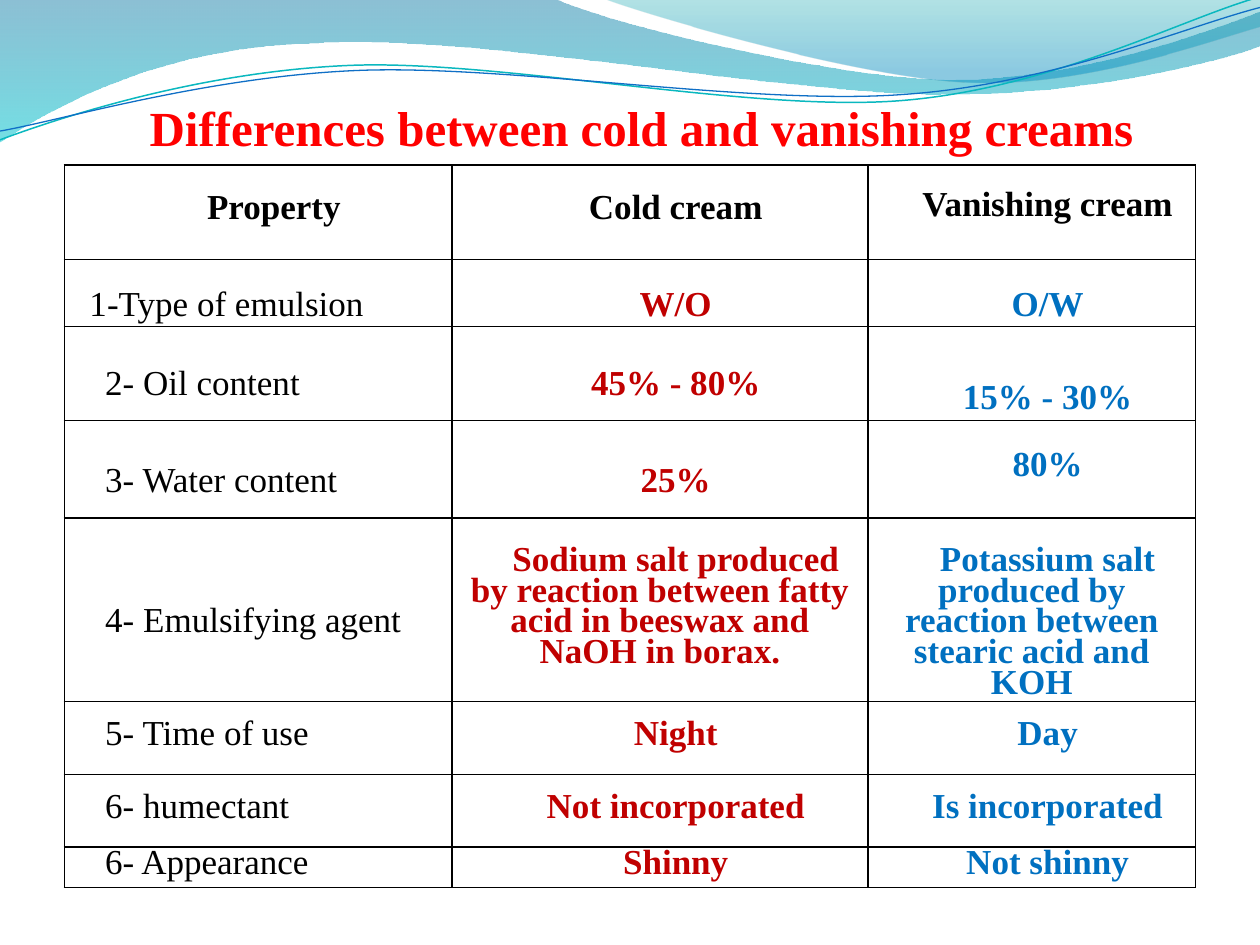
from dataclasses import dataclass
from math import cos, radians, sin

from lxml import etree
from pptx import Presentation
from pptx.dml.color import RGBColor
from pptx.enum.text import MSO_ANCHOR, MSO_AUTO_SIZE, PP_ALIGN
from pptx.oxml.ns import qn
from pptx.util import Pt

TOP, MIDDLE = MSO_ANCHOR.TOP, MSO_ANCHOR.MIDDLE
LEFT, CENTER = PP_ALIGN.LEFT, PP_ALIGN.CENTER
FIT_SHAPE = MSO_AUTO_SIZE.SHAPE_TO_FIT_TEXT
UNITS_PER_POINT = 100
RIPPLE_TILT = -2.7


@dataclass(frozen=True)
class Theme:
    """Colours, type sizes and spacing of the slide."""
    font: str = "Times New Roman"
    title_size: float = 28
    body_size: float = 20
    title: str = "FF0000"
    ink: str = "000000"
    cold: str = "C00000"
    vanishing: str = "0070C0"
    wide_indent: float = 18
    narrow_indent: float = 9
    tight_line: float = 16.8
    body_line: float = 17.5
    cell_inset: float = 5.4
    border: float = 1


THEME = Theme()

BANDS = [
    ([(0, 0), (317, -0.7),
      (342.7, 12.2, 478, 45.4, 545.8, 45.4), (614.2, 45.4, 689.8, 18.7, 720, 6.5),
      (720.7, 25.9), (707.8, 31.7, 626.4, 54.7, 537.1, 54),
      (447.8, 54, 275, 20.2, 185, 24.5), (92.9, 25.9, 33.1, 59.8, -0.7, 81.4), (0, 0)],
     [(0, "0074A1", 45), (1, "00C6CF", 55)]),
    ([(344.9, -0.7), (366.5, 7.9, 491, 44.6, 553.7, 46.8),
      (619.2, 49.7, 691.9, 23, 720, 15.1), (720, 0), (344.9, -0.7)],
     [(0, "00A1A9", 30), (0.8, "008BBF", 45)]),
]
RIPPLES = [
    ([(0, 79.9), (34.6, 67, 113.8, 41, 199.4, 37.4),
      (284.4, 33.8, 427, 64.1, 513.4, 57.6), (599.8, 51.1, 675.4, 10.8, 718.6, -1.4)],
     (359.3, 41.4), "0AB8BF", 0.85),
    ([(0, 74.9), (33.8, 69.1, 118.1, 43.9, 203.8, 40.3),
      (290.2, 36.7, 429.8, 60.5, 516.2, 54), (601.9, 48.2, 677.5, 15.1, 720, 4.3)],
     (359.7, 42.5), "0F6FC6", 0.75),
]

COLUMN_WIDTHS = [221.5, 237.8, 187.2]
HEADER = ["Property", "Cold cream", "Vanishing cream"]
PROPERTIES = [
    ["1-Type of emulsion", "W/O", "O/W"],
    ["2- Oil content", "45% - 80%", "15% - 30%"],
    ["3- Water content", "25%", "80%"],
    ["4- Emulsifying agent",
     "Sodium salt produced by reaction between fatty acid in beeswax and NaOH in borax.",
     "Potassium salt produced by reaction between stearic acid and KOH"],
    ["5- Time of use", "Night", "Day"],
    ["6- humectant", "Not incorporated", "Is incorporated"],
    ["6- Appearance", "Shinny", "Not shinny"],
]
ROW_HEIGHTS = [54, 38.2, 53.7, 55.8, 94, 41.5, 41.5, 23.2]
LINES_ABOVE = [(1, 1, 1), (1, 1, 1), (1, 1, 2), (1, 1, 1), (1, 0, 1)] + [(0, 0, 0)] * 3
LINES_BELOW = {(0, 0): 1, (0, 1): 1, (3, 2): 1}
TIGHT_ROWS = (0, 2)


def apply(target, formats):
    """Set every attribute in formats on target."""
    for name, value in formats.items():
        setattr(target, name, value)


def write(paragraph, text, size, colour, bold, align, indent):
    """Fill a paragraph with one formatted, first-line indented text."""
    properties = paragraph._p.get_or_add_pPr()
    properties.set("marL", "0")
    properties.set("indent", str(int(Pt(indent))))
    paragraph.alignment = align
    run = paragraph.add_run()
    run.text = text
    apply(run.font, {"name": THEME.font, "size": Pt(size), "bold": bold})
    run.font.color.rgb = RGBColor.from_string(colour)


def level(segments, centre, tilt):
    """Turn segments about a centre so that the tilt restores them."""
    (cx, cy), angle = centre, radians(-tilt)
    return [[value for x, y in zip(segment[::2], segment[1::2])
             for value in (cx + (x - cx) * cos(angle) - (y - cy) * sin(angle),
                           cy + (x - cx) * sin(angle) + (y - cy) * cos(angle))]
            for segment in segments]


def add_outline(slide, left, top, segments, close):
    """Draw one shadowless outline of lines and cubic curves."""
    points = [(x * UNITS_PER_POINT, y * UNITS_PER_POINT) for segment in segments
              for x, y in zip(segment[::2], segment[1::2])]
    builder = slide.shapes.build_freeform(*points[0], scale=Pt(1) / UNITS_PER_POINT)
    builder.add_line_segments(points[1:], close=close)
    outline = builder.convert_to_shape(Pt(left), Pt(top))
    outline.shadow.inherit = False
    steps = iter(outline._element.findall(".//" + qn("a:lnTo")))
    for segment in segments[1:]:
        first = next(steps)
        if len(segment) == 6:
            first.tag = qn("a:cubicBezTo")
            for step in (next(steps), next(steps)):
                first.append(step[0])
                step.getparent().remove(step)
    return outline


def add_waves(slide, left, top):
    """Draw the translucent bands and thin ripples of the page header."""
    for segments, stops in BANDS:
        band = add_outline(slide, left, top, segments, True)
        band.line.fill.background()
        band.fill.gradient()
        band.fill.gradient_angle = 270
        for stop, (position, colour, _) in zip(band.fill.gradient_stops, stops):
            stop.position = position
            stop.color.rgb = RGBColor.from_string(colour)
        tints = band._element.spPr.findall(".//" + qn("a:gs") + "/" + qn("a:srgbClr"))
        for tint, (_, _, opacity) in zip(tints, stops):
            etree.SubElement(tint, qn("a:alpha"), val=str(opacity * 1000))
    for segments, centre, colour, width in RIPPLES:
        ripple = add_outline(slide, left, top, level(segments, centre, RIPPLE_TILT), False)
        ripple.rotation = RIPPLE_TILT
        ripple.fill.background()
        ripple.line.color.rgb = RGBColor.from_string(colour)
        ripple.line.width = Pt(width)


def add_title(slide, left, top, width, height):
    """Place the centred heading above the table."""
    heading = slide.shapes.add_textbox(Pt(left), Pt(top), Pt(width), Pt(height)).text_frame
    apply(heading, {"word_wrap": True, "auto_size": FIT_SHAPE})
    write(heading.paragraphs[0], "Differences between cold and vanishing creams",
          THEME.title_size, THEME.title, True, CENTER, THEME.wide_indent)
    heading.paragraphs[0]._p.get_or_add_pPr().set("rtl", "1")


def add_borders(cell):
    """Rule all four sides of a cell."""
    properties = cell._tc.get_or_add_tcPr()
    for side in ("a:lnL", "a:lnR", "a:lnT", "a:lnB"):
        rule = etree.SubElement(properties, qn(side), w=str(int(Pt(THEME.border))))
        paint = etree.SubElement(rule, qn("a:solidFill"))
        etree.SubElement(paint, qn("a:srgbClr"), val=THEME.ink)


def fill_cell(cell, row, column, text):
    """Format one table cell by its row and column."""
    line = THEME.tight_line if row in TIGHT_ROWS else THEME.body_line
    is_label = row > 0 and column == 0
    colour = THEME.ink if row == 0 else (THEME.ink, THEME.cold, THEME.vanishing)[column]
    apply(cell, {
        "margin_left": Pt(THEME.cell_inset),
        "margin_right": Pt(THEME.cell_inset),
        "margin_top": Pt(line * LINES_ABOVE[row][column]),
        "margin_bottom": Pt(line * LINES_BELOW.get((row, column), 0)),
        "vertical_anchor": TOP if (row, column) == (0, 2) else MIDDLE,
    })
    add_borders(cell)
    cell.fill.background()
    paragraph = cell.text_frame.paragraphs[0]
    paragraph.line_spacing = Pt(line)
    write(paragraph, text, THEME.body_size, colour, not is_label,
          LEFT if is_label else CENTER,
          THEME.narrow_indent if (row, column) == (1, 0) else THEME.wide_indent)


def add_comparison(slide, left, top):
    """Place the table that compares the two creams."""
    rows = [HEADER] + PROPERTIES
    table = slide.shapes.add_table(
        len(rows), len(HEADER), Pt(left), Pt(top),
        Pt(sum(COLUMN_WIDTHS)), Pt(sum(ROW_HEIGHTS))).table
    apply(table, {"first_row": False, "horz_banding": False})
    for column, width in zip(table.columns, COLUMN_WIDTHS):
        column.width = Pt(width)
    for row, (height, texts) in enumerate(zip(ROW_HEIGHTS, rows)):
        table.rows[row].height = Pt(height)
        for column, text in enumerate(texts):
            fill_cell(table.cell(row, column), row, column, text)


def main():
    """Build and save the slide."""
    deck = Presentation()
    apply(deck, {"slide_width": Pt(720), "slide_height": Pt(540)})
    slide = deck.slides.add_slide(deck.slide_layouts[6])
    add_waves(slide, 0, 0)
    add_comparison(slide, 36.75, 94.3)
    add_title(slide, 67.7, 52.2, 615.6, 41)
    deck.save("out.pptx")


if __name__ == "__main__":
    main()
